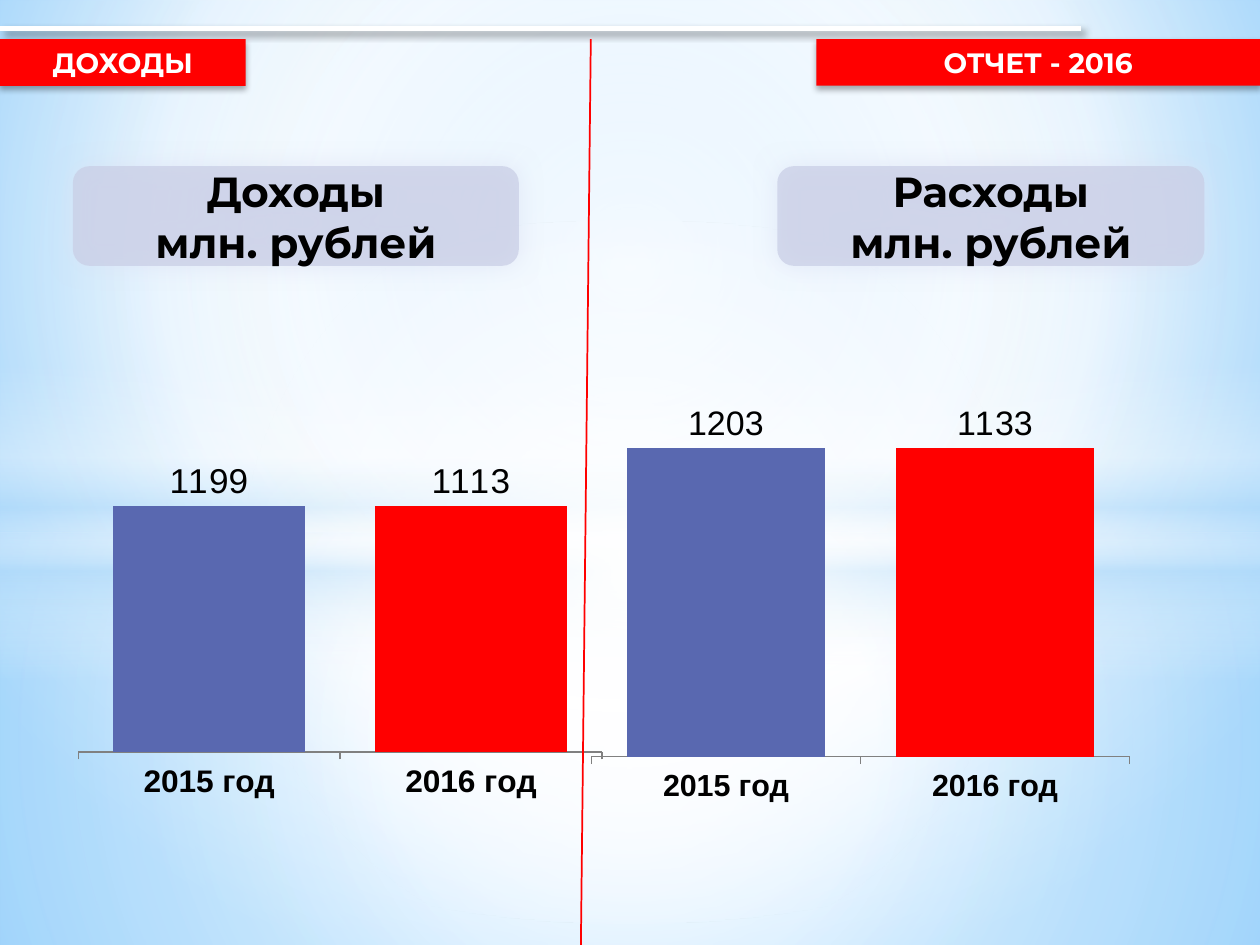
import lxml.etree
import pptx
import pptx.chart.data
import pptx.dml.color
import pptx.enum.chart
import pptx.enum.shapes
import pptx.enum.text
import pptx.oxml.ns
import pptx.util

Cm, Pt = pptx.util.Cm, pptx.util.Pt
qn = pptx.oxml.ns.qn
SHAPE = pptx.enum.shapes.MSO_SHAPE
WIDTH, HEIGHT = 25.4, 19.05
RED, BLUE, WHITE, BLACK, SKY = "FF0000", "5968B0", "FFFFFF", "000000", "B4DCFA"
TAG_SHADOW = (BLACK, 32, 3.5, 2.2, 90)


def colour(hex_code):
    return pptx.dml.color.RGBColor.from_string(hex_code)


def add_node(parent, tag, **attributes):
    values = {name: str(value) for name, value in attributes.items()}
    return lxml.etree.SubElement(parent, qn(tag), values)


def add_colour(parent, hex_code, alpha=100):
    node = add_node(parent, "a:srgbClr", val=hex_code)
    if alpha < 100:
        add_node(node, "a:alpha", val=alpha * 1000)


def set_gradient(fill, properties, stops, focus=None):
    """Stops are (position, colour, alpha); focus is the inner box, None means top to bottom."""
    fill.gradient()
    gradient = properties.find(qn("a:gradFill"))
    for child in list(gradient):
        gradient.remove(child)
    stop_list = add_node(gradient, "a:gsLst")
    for position, hex_code, alpha in stops:
        add_colour(add_node(stop_list, "a:gs", pos=position * 1000), hex_code, alpha)
    if focus:
        route = add_node(gradient, "a:path", path="circle")
        sides = {side: part * 1000 for side, part in zip("ltrb", focus)}
        add_node(route, "a:fillToRect", **sides)
    else:
        add_node(gradient, "a:lin", ang=90 * 60000, scaled=0)


def set_shadow(shape, shadow=None):
    """Shadow is (colour, alpha, blur, distance, angle); None switches it off."""
    effects = add_node(shape._element.spPr, "a:effectLst")
    if shadow:
        hex_code, alpha, blur, distance, angle = shadow
        outer = add_node(effects, "a:outerShdw", blurRad=Pt(blur), dist=Pt(distance),
                         dir=angle * 60000, algn="ctr", rotWithShape=0)
        add_colour(outer, hex_code, alpha)


def place(shape, box):
    shape.left, shape.top, shape.width, shape.height = (Cm(length) for length in box)


def write_text(shape, lines, size, hex_code):
    frame = shape.text_frame
    frame.word_wrap = True
    frame.auto_size = pptx.enum.text.MSO_AUTO_SIZE.NONE
    frame.vertical_anchor = pptx.enum.text.MSO_ANCHOR.MIDDLE
    frame.text = "\n".join(lines)
    for para in frame.paragraphs:
        para.alignment = pptx.enum.text.PP_ALIGN.CENTER
        para.font.name = "Montserrat"
        para.font.size = Pt(size)
        para.font.bold = True
        para.font.color.rgb = colour(hex_code)


def draw_background(page):
    set_gradient(page.background.fill, page.background._cSld.bg.bgPr,
                 [(0, "9ED5FF", 100), (60, WHITE, 100), (100, "5BB9FF", 100)],
                 (20, 10, 20, 60))
    centre = (50, 50, 50, 50)
    horizon = 10.74
    layers = [
        (SHAPE.RECTANGLE, (0, horizon, WIDTH, HEIGHT - horizon),
         [(0, WHITE, 91), (37, WHITE, 76), (100, SKY, 79)], centre),
        (SHAPE.RECTANGLE, (0, 0, WIDTH, horizon),
         [(0, WHITE, 89), (48, WHITE, 62), (100, SKY, 79)], centre),
        (SHAPE.RECTANGLE, (0, 7.37, WIDTH, 6.35),
         [(0, WHITE, 0), (29, WHITE, 30), (45, SKY, 40), (55, WHITE, 26),
          (65, SKY, 60), (100, WHITE, 0)], None),
        (SHAPE.OVAL, (0, 4.45, WIDTH, 14.17),
         [(0, WHITE, 100), (54, WHITE, 0)], centre),
    ]
    for kind, box, stops, focus in layers:
        layer = page.shapes.add_shape(kind, *(Cm(length) for length in box))
        set_gradient(layer.fill, layer._element.spPr, stops, focus)
        layer.line.fill.background()
        set_shadow(layer)


def draw_heading(page, box, lines):
    heading = page.shapes.add_shape(SHAPE.DOUBLE_BRACKET, *(Cm(length) for length in box))
    heading.fill.solid()
    heading.fill.fore_color.rgb = colour("C8CDE5")
    add_node(heading._element.spPr.find(qn("a:solidFill"))[0], "a:alpha", val=70000)
    heading.line.fill.background()
    set_shadow(heading, ("DCE1F4", 90, 15, 0, 45))
    frame = heading.text_frame
    frame.margin_left = frame.margin_top = frame.margin_right = frame.margin_bottom = 0
    write_text(heading, lines, 24, BLACK)


def draw_chart(page, box, values, plot_box, label_size, axis_size):
    data = pptx.chart.data.CategoryChartData()
    data.categories = ["2015 год", "2016 год"]
    data.add_series("Series 1", values)
    chart = page.shapes.add_chart(pptx.enum.chart.XL_CHART_TYPE.COLUMN_CLUSTERED,
                                  *(Cm(length) for length in box), data).chart
    chart.has_legend = chart.has_title = False
    chart.font.name = "Arial"
    chart.font.size = Pt(label_size)
    chart.font.color.rgb = colour(BLACK)

    # Axes
    chart.value_axis.visible = False
    chart.value_axis.has_major_gridlines = False
    chart.value_axis.minimum_scale, chart.value_axis.maximum_scale = 70, 200
    axis = chart.category_axis
    axis.major_tick_mark = pptx.enum.chart.XL_TICK_MARK.OUTSIDE
    axis.tick_labels.font.size = Pt(axis_size)
    axis.tick_labels.font.bold = True
    axis.format.line.color.rgb = colour("808080")

    # Columns and their values
    plot = chart.plots[0]
    plot.gap_width = 36
    plot.vary_by_categories = False
    plot.has_data_labels = True
    labels = plot.data_labels
    labels.show_value = True
    labels.number_format, labels.number_format_is_linked = "0", False
    labels.position = pptx.enum.chart.XL_LABEL_POSITION.OUTSIDE_END
    labels.font.size = Pt(label_size)
    for index, hex_code in enumerate((BLUE, RED)):
        fill = plot.series[0].points[index].format.fill
        fill.solid()
        fill.fore_color.rgb = colour(hex_code)

    # Inner plot area as shares of the chart
    area = chart._chartSpace.chart.plotArea
    for old in area.findall(qn("c:layout")):
        area.remove(old)
    layout = add_node(area, "c:layout")
    area.insert(0, layout)
    manual = add_node(layout, "c:manualLayout")
    add_node(manual, "c:layoutTarget", val="inner")
    for side in "xy":
        add_node(manual, f"c:{side}Mode", val="edge")
    for side, share in zip("xywh", plot_box):
        add_node(manual, f"c:{side}", val=share)


def draw_line(page, start, end, hex_code, width, shadow=None):
    line = page.shapes.add_connector(pptx.enum.shapes.MSO_CONNECTOR.STRAIGHT,
                                     *(Cm(length) for length in start + end))
    line.line.color.rgb = colour(hex_code)
    line.line.width = Pt(width)
    set_shadow(line, shadow)


def draw_tag(tag, box, text):
    place(tag, box)
    tag.fill.solid()
    tag.fill.fore_color.rgb = colour(RED)
    tag.line.fill.background()
    set_shadow(tag, TAG_SHADOW)
    write_text(tag, [text], 16, WHITE)


def main():
    deck = pptx.Presentation()
    deck.slide_width, deck.slide_height = Cm(WIDTH), Cm(HEIGHT)
    page = deck.slides.add_slide(deck.slide_layouts[5])
    draw_background(page)

    # Income on the left, spending on the right
    draw_heading(page, (1.47, 3.35, 8.99, 2.01), ["Доходы", "млн. рублей"])
    draw_heading(page, (15.67, 3.35, 8.61, 2.01), ["Расходы", "млн. рублей"])
    draw_chart(page, (11.3, 7.92, 12.47, 8.53), (1203, 1133),
               (0.05, 0.13, 0.87, 0.73), 19.4, 17.4)
    draw_chart(page, (1.09, 9.32, 12.14, 6.93), (1199, 1113),
               (0.04, 0.11, 0.87, 0.73), 20.1, 18.1)

    # Top strip: the title is raised above the background layers
    draw_line(page, (0, 0.58), (21.79, 0.58), WHITE, 3, (BLACK, 40, 4, 3, 45))
    report_tag = page.shapes.add_shape(SHAPE.RECTANGLE, 0, 0, Cm(1), Cm(1))
    draw_tag(report_tag, (16.46, 0.79, 8.94, 0.94), "ОТЧЕТ - 2016")
    title = page.shapes.title
    page.shapes._spTree.append(title._element)
    draw_tag(title, (0, 0.79, 4.95, 0.94), "ДОХОДЫ")

    # Divider between the halves
    draw_line(page, (11.91, 0.79), (11.71, HEIGHT), RED, 1)
    deck.save("out.pptx")


if __name__ == "__main__":
    main()
